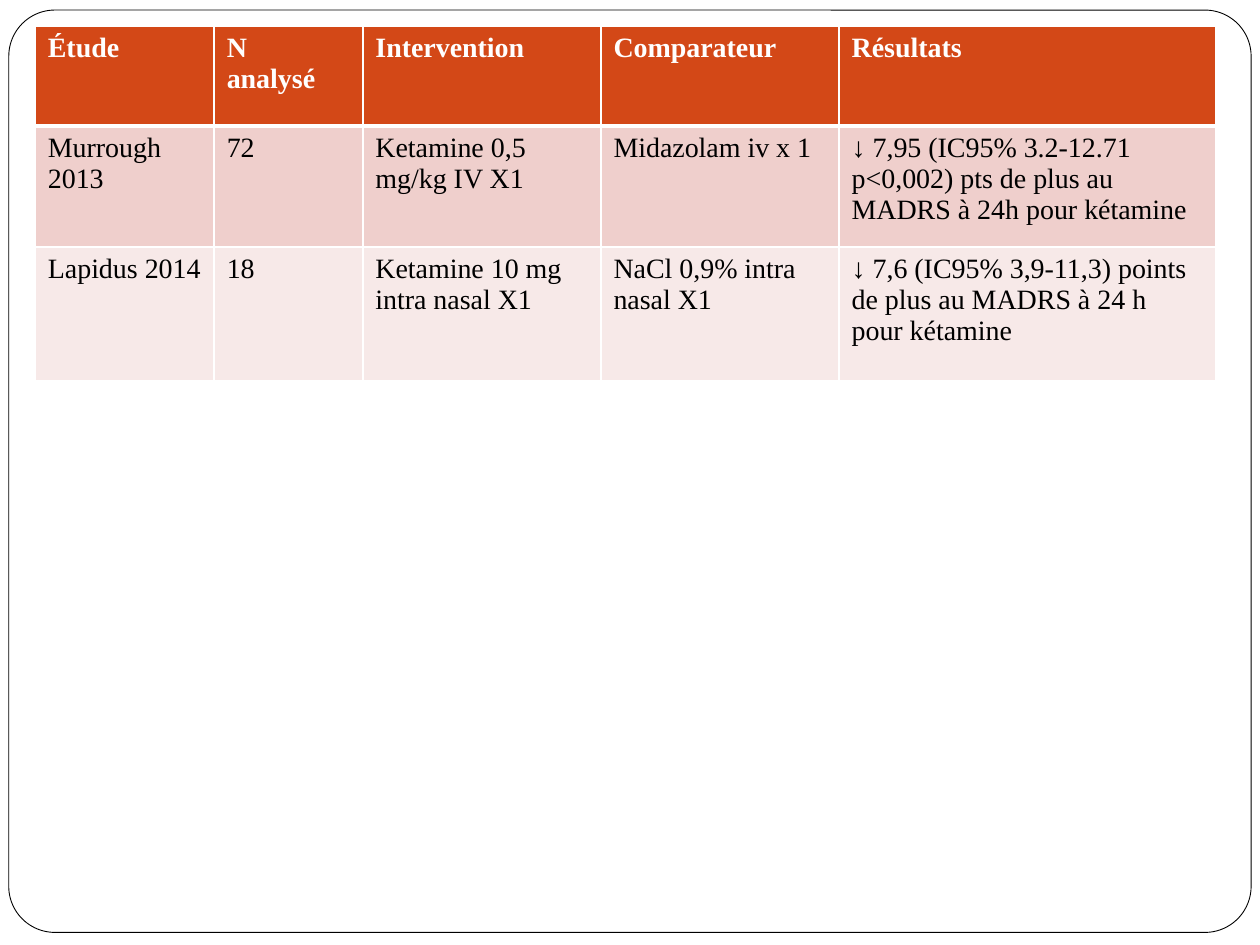
from dataclasses import dataclass

from lxml import etree
from pptx import Presentation
from pptx.dml.color import RGBColor
from pptx.enum.shapes import MSO_SHAPE
from pptx.oxml.ns import qn
from pptx.util import Inches, Pt

ROUNDED_RECTANGLE = MSO_SHAPE.ROUNDED_RECTANGLE


@dataclass(frozen=True)
class Theme:
    white: str = "FFFFFF"
    black: str = "000000"
    header: str = "D34817"
    bands: tuple = ("EFCFCC", "F7E9E8")
    font: str = "Times New Roman"
    arrow_font: str = "Arial"
    size: int = 16
    frame_line: float = 0.5
    thin_border: int = 1
    header_border: int = 3


theme = Theme()
ARROW = "↓"
COLUMN_WIDTHS = (1.42, 1.18, 1.89, 1.89, 2.99)
ROW_HEIGHTS = (0.79, 0.96, 1.06)
STUDIES = (
    ("Étude", "N\nanalysé", "Intervention", "Comparateur", "Résultats"),
    ("Murrough 2013", "72", "Ketamine 0,5 mg/kg IV X1", "Midazolam iv x 1",
     "↓ 7,95 (IC95% 3.2-12.71 p<0,002) pts de plus au MADRS à 24h pour kétamine"),
    ("Lapidus 2014", "18", "Ketamine 10 mg intra nasal X1", "NaCl 0,9% intra nasal X1",
     "↓ 7,6 (IC95% 3,9-11,3) points de plus au MADRS à 24 h pour kétamine"),
)


def add_border(cell, side, width):
    properties = cell._tc.get_or_add_tcPr()
    line = etree.SubElement(properties, qn(f"a:ln{side}"), w=str(Pt(width)))
    fill = etree.SubElement(line, qn("a:solidFill"))
    etree.SubElement(fill, qn("a:srgbClr"), val=theme.white)


presentation = Presentation()
presentation.slide_width = Inches(10)
presentation.slide_height = Inches(7.5)
slide = presentation.slides.add_slide(presentation.slide_layouts[6])

frame = slide.shapes.add_shape(
    ROUNDED_RECTANGLE, Inches(0.07), Inches(0.08), Inches(9.86), Inches(7.32))
frame.adjustments[0] = 0.05
frame.shadow.inherit = False
frame.fill.solid()
frame.fill.fore_color.rgb = RGBColor.from_string(theme.white)
frame.line.color.rgb = RGBColor.from_string(theme.black)
frame.line.width = Pt(theme.frame_line)

table = slide.shapes.add_table(
    len(ROW_HEIGHTS), len(COLUMN_WIDTHS), Inches(0.28), Inches(0.21),
    Inches(sum(COLUMN_WIDTHS)), Inches(sum(ROW_HEIGHTS))).table
for column, width in zip(table.columns, COLUMN_WIDTHS):
    column.width = Inches(width)
for row, height in zip(table.rows, ROW_HEIGHTS):
    row.height = Inches(height)

for row_index, texts in enumerate(STUDIES):
    is_header = row_index == 0
    fill_color = theme.header if is_header else theme.bands[row_index - 1]
    text_color = theme.white if is_header else theme.black
    top = theme.header_border if row_index == 1 else theme.thin_border
    bottom = theme.header_border if is_header else theme.thin_border

    for column_index, text in enumerate(texts):
        cell = table.cell(row_index, column_index)
        for side, width in (("L", theme.thin_border), ("R", theme.thin_border),
                            ("T", top), ("B", bottom)):
            add_border(cell, side, width)
        cell.fill.solid()
        cell.fill.fore_color.rgb = RGBColor.from_string(fill_color)

        cell.text = text
        for paragraph in cell.text_frame.paragraphs:
            if text.startswith(ARROW):
                paragraph.runs[0].text = ARROW
                paragraph.add_run().text = text.removeprefix(ARROW)
            for run in paragraph.runs:
                run.font.name = theme.arrow_font if run.text == ARROW else theme.font
            paragraph.font.size = Pt(theme.size)
            paragraph.font.bold = is_header
            paragraph.font.color.rgb = RGBColor.from_string(text_color)
            for run in paragraph.runs:
                run.font.size = Pt(theme.size)
                run.font.bold = is_header
                run.font.color.rgb = RGBColor.from_string(text_color)

presentation.save("out.pptx")
